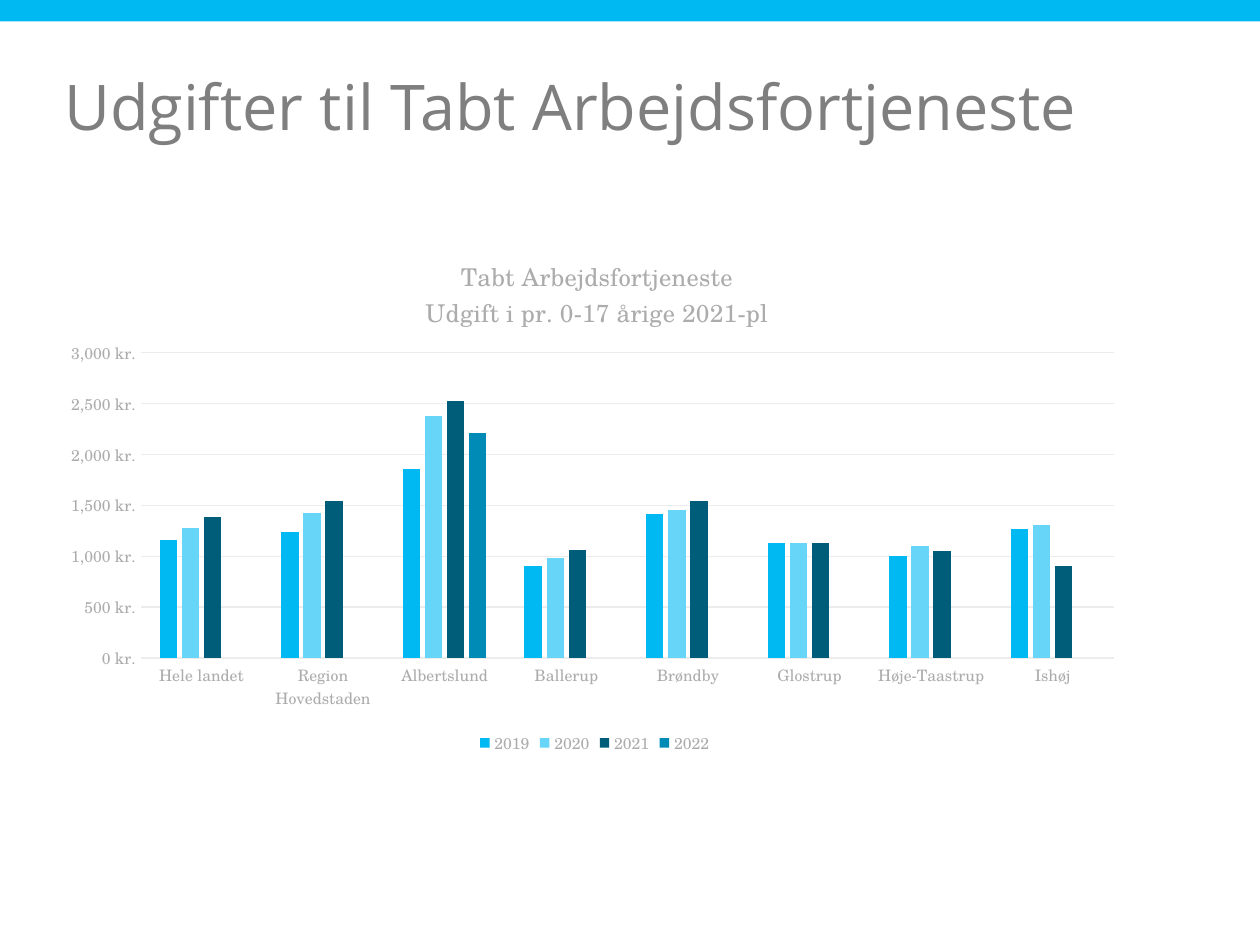
from lxml.etree import SubElement
from pptx import Presentation
from pptx.chart.data import CategoryChartData
from pptx.dml.color import RGBColor
from pptx.enum.chart import XL_CHART_TYPE, XL_LEGEND_POSITION, XL_TICK_MARK
from pptx.enum.shapes import MSO_SHAPE
from pptx.enum.text import MSO_ANCHOR, MSO_AUTO_SIZE, PP_ALIGN
from pptx.oxml.ns import qn
from pptx.util import Inches, Pt

TOWNS = ["Hele landet", "Region Hovedstaden", "Albertslund", "Ballerup",
         "Brøndby", "Glostrup", "Høje-Taastrup", "Ishøj"]
EXPENSES = {
    "2019": ("00B9F2", [1160, 1240, 1860, 900, 1410, 1130, 1000, 1270]),
    "2020": ("66D5F7", [1280, 1420, 2380, 980, 1450, 1130, 1100, 1310]),
    "2021": ("005D79", [1390, 1540, 2530, 1060, 1540, 1130, 1050, 900]),
    "2022": ("008BB6", [None, None, 2210, None, None, None, None, None]),
}


def color(hex_text):
    return RGBColor.from_string(hex_text)


def place(element, index, **shares):
    """Give a chart part a fixed layout, in shares of the chart's size."""
    for old in element.findall(qn("c:layout")):
        element.remove(old)
    layout = SubElement(element, qn("c:layout"))
    element.insert(index, layout)
    manual = SubElement(layout, qn("c:manualLayout"))
    if "w" in shares:
        SubElement(manual, qn("c:layoutTarget")).set("val", "inner")
    for mode in ("xMode", "yMode"):
        SubElement(manual, qn(f"c:{mode}")).set("val", "edge")
    for name, share in shares.items():
        SubElement(manual, qn(f"c:{name}")).set("val", str(share))


class SlideBuilder:
    heading_font = "Open Sans"
    chart_font = "TeX Gyre Schola"
    accent, dark, muted, pale = "00B9F2", "7F7F7F", "ACACAC", "ECECEC"

    def __init__(self, deck):
        self.deck = deck
        self.page = deck.slides.add_slide(deck.slide_layouts[5])

    def area(self, left, top, width, height):
        """Turn shares of the slide's size into lengths."""
        across, down = self.deck.slide_width, self.deck.slide_height
        return (round(left * across), round(top * down),
                round(width * across), round(height * down))

    def style(self, font, size, hex_text, name):
        font.size, font.name, font.bold = Pt(size), name, False
        font.color.rgb = color(hex_text)

    def band(self, *shares):
        band = self.page.shapes.add_shape(MSO_SHAPE.RECTANGLE, *self.area(*shares))
        band.shadow.inherit = False
        band.fill.solid()
        band.fill.fore_color.rgb = color(self.accent)
        band.line.fill.background()

    def title(self, text, *shares):
        title = self.page.shapes.title
        title.left, title.top, title.width, title.height = self.area(*shares)
        frame = title.text_frame
        frame.text = text
        frame.word_wrap = True
        frame.auto_size = MSO_AUTO_SIZE.NONE
        frame.vertical_anchor = MSO_ANCHOR.TOP
        frame.margin_left = frame.margin_right = 0
        frame.margin_top = frame.margin_bottom = 0
        para = frame.paragraphs[0]
        para.alignment = PP_ALIGN.LEFT
        para.line_spacing = 0.83
        self.style(para.font, 36, self.dark, self.heading_font)

    def column_chart(self, heading, categories, series, *shares):
        data = CategoryChartData()
        data.categories = categories
        for name, (_, values) in series.items():
            data.add_series(name, values)
        chart = self.page.shapes.add_chart(
            XL_CHART_TYPE.COLUMN_CLUSTERED, *self.area(*shares), data).chart
        self.style(chart.font, 10, self.dark, self.chart_font)

        plot = chart.plots[0]
        plot.gap_width, plot.overlap = 219, -27
        plot.vary_by_categories = False
        for bars, (fill, _) in zip(plot.series, series.values()):
            bars.format.fill.solid()
            bars.format.fill.fore_color.rgb = color(fill)
            bars.invert_if_negative = False

        self.chart_heading(chart, heading)
        self.axes(chart)
        chart.has_legend = True
        chart.legend.position = XL_LEGEND_POSITION.BOTTOM
        chart.legend.include_in_layout = False
        self.style(chart.legend.font, 9, self.muted, self.chart_font)
        place(next(chart.element.iter(qn("c:plotArea"))), 0,
              x=0.08, y=0.24, w=0.9, h=0.57)

    def chart_heading(self, chart, heading):
        chart.has_title = True
        frame = chart.chart_title.text_frame
        frame.text = heading
        for para in frame.paragraphs:
            self.style(para.font, 14, self.muted, self.chart_font)
        place(next(chart.element.iter(qn("c:title"))), 1, x=0.34, y=0.05)

    def axes(self, chart):
        for axis in (chart.category_axis, chart.value_axis):
            axis.major_tick_mark = axis.minor_tick_mark = XL_TICK_MARK.NONE
            self.style(axis.tick_labels.font, 9, self.muted, self.chart_font)
        values = chart.value_axis
        values.minimum_scale, values.maximum_scale, values.major_unit = 0, 3000, 500
        values.tick_labels.number_format = '#,##0\\ "kr."'
        values.tick_labels.number_format_is_linked = False
        values.format.line.fill.background()
        values.has_major_gridlines = True
        for line in (chart.category_axis.format.line,
                     values.major_gridlines.format.line):
            line.color.rgb = color(self.pale)
            line.width = Pt(0.75)


def main():
    deck = Presentation()
    deck.slide_width, deck.slide_height = Inches(10), Inches(7.5)
    slide = SlideBuilder(deck)
    slide.band(0, 0, 1, 0.17 / 7.5)
    slide.title("Udgifter til Tabt Arbejdsfortjeneste",
                0.051, 0.64 / 7.5, 0.894, 1.06 / 7.5)
    slide.column_chart("Tabt Arbejdsfortjeneste\nUdgift i pr. 0-17 årige 2021-pl",
                       TOWNS, EXPENSES, 0.043, 1.78 / 7.5, 0.858, 4.25 / 7.5)
    deck.save("out.pptx")


if __name__ == "__main__":
    main()
